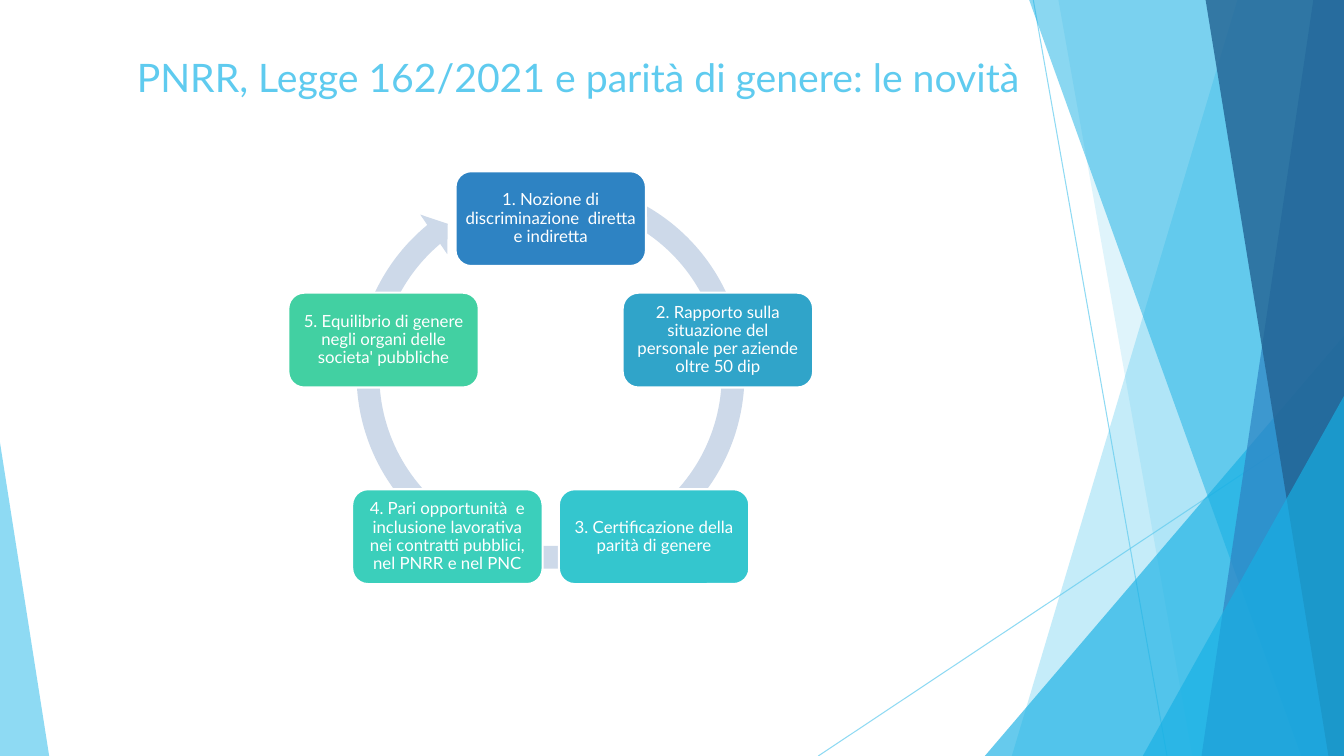
import math
import pptx
import pptx.dml.color
import pptx.enum.shapes
import pptx.enum.text
import pptx.oxml
import pptx.oxml.ns
import pptx.util
from pptx.util import Cm

THEME = {
    "font": "Lato",
    "title_size": 28,
    "step_size": 12,
    "white": "FFFFFF",
    "sky": "5FCBEF",
    "cyan": "17B0E4",
    "blue": "2E83C3",
    "navy": "226292",
    "ring": "CDD9E9",
    "steps": ["2E83C3", "30A4C9", "34C6CE", "3BCFBB", "42D0A2"],
}
WIDTH, HEIGHT = 33.87, 19.05
PRESET = pptx.enum.shapes.MSO_SHAPE


def paint(fill, color, opacity=100):
    fill.solid()
    fill.fore_color.rgb = pptx.dml.color.RGBColor.from_string(color)
    if opacity < 100:
        tint = fill._xPr.find(".//" + pptx.oxml.ns.qn("a:srgbClr"))
        alpha = pptx.oxml.parse_xml(f"<a:alpha {pptx.oxml.ns.nsdecls('a')} val='{opacity * 1000}'/>")
        tint.append(alpha)


def write(paragraph, words, size, color):
    run = paragraph.add_run()
    run.text = words
    run.font.name = THEME["font"]
    run.font.size = pptx.util.Pt(size)
    run.font.color.rgb = pptx.dml.color.RGBColor.from_string(color)


deck = pptx.Presentation()
deck.slide_width, deck.slide_height = Cm(WIDTH), Cm(HEIGHT)
slide = deck.slides.add_slide(deck.slide_layouts[6])
shapes = slide.shapes

for x1, y1, x2, y2 in [(26.04, 0, 29.41, HEIGHT), (WIDTH, 10.24, 20.62, HEIGHT)]:
    ray = shapes.add_connector(
        pptx.enum.shapes.MSO_CONNECTOR.STRAIGHT, Cm(x1), Cm(y1), Cm(x2), Cm(y2))
    ray.line.width = pptx.util.Pt(0.75)
    paint(ray.line.fill, THEME["sky"], 70)
    ray._element.spPr.append(
        pptx.oxml.parse_xml(f"<a:effectLst {pptx.oxml.ns.nsdecls('a')}/>"))

facets = [
    ("band", (31.19, 25.5), "sky", 36),
    ("band", (26.67, 30.05), "sky", 20),
    ("triangle", (24.82, 8.46, 9.05, 1), "cyan", 66),
    ("band", (25.93, 32.79), "cyan", 50),
    ("band", (33.1, 30.28), "blue", 70),
    ("band", (30.38, 33.48), "navy", 80),
    ("triangle", (28.8, 9.98, 5.07, 1), "cyan", 66),
    ("triangle", (0, 11.15, 1.24, 0), "sky", 70),
]
for kind, geometry, color, opacity in facets:
    if kind == "band":
        top_x, bottom_x = geometry
        outline = shapes.build_freeform(Cm(top_x), Cm(-0.02))
        outline.add_line_segments(
            [(Cm(WIDTH), Cm(-0.02)), (Cm(WIDTH), Cm(HEIGHT)), (Cm(bottom_x), Cm(HEIGHT))])
        facet = outline.convert_to_shape()
    else:
        left, top, width, apex = geometry
        facet = shapes.add_shape(
            PRESET.ISOSCELES_TRIANGLE, Cm(left), Cm(top), Cm(width), Cm(HEIGHT - top))
        facet.adjustments[0] = apex
    facet.shadow.inherit = False
    facet.line.fill.background()
    paint(facet.fill, THEME[color], opacity)

title = shapes.add_textbox(Cm(3.2), Cm(1.22), Cm(27.3), Cm(2.69)).text_frame
title.word_wrap = True
write(title.paragraphs[0], "PNRR, Legge 162/2021 e parità di genere: le novità",
      THEME["title_size"], THEME["sky"])

cycle = shapes.add_shape(PRESET.CIRCULAR_ARROW, Cm(8.67), Cm(4.24), Cm(10.41), Cm(10.41))
for index, value in enumerate([0.055, 3.307, 138.146, 173.625, 0.058]):
    cycle.adjustments[index] = value
cycle.shadow.inherit = False
cycle.line.fill.background()
paint(cycle.fill, THEME["ring"])

steps = [
    "1. Nozione di discriminazione  diretta e indiretta",
    "2. Rapporto sulla situazione del personale per aziende oltre 50 dip",
    "3. Certificazione della parità di genere",
    "4. Pari opportunità  e inclusione lavorativa nei contratti pubblici, nel PNRR e nel PNC",
    "5. Equilibrio di genere negli organi delle societa' pubbliche",
]
center_x, center_y, radius = 13.88, 9.94, 4.43
step_width, step_height = 4.8, 2.39
for index, (words, color) in enumerate(zip(steps, THEME["steps"])):
    angle = 2 * math.pi * index / len(steps)
    step = shapes.add_shape(
        PRESET.ROUNDED_RECTANGLE,
        Cm(center_x + radius * math.sin(angle) - step_width / 2),
        Cm(center_y - radius * math.cos(angle) - step_height / 2),
        Cm(step_width), Cm(step_height))
    step.shadow.inherit = False
    paint(step.fill, color)
    paint(step.line.fill, THEME["white"])
    step.line.width = pptx.util.Pt(1.5)
    frame = step.text_frame
    frame.word_wrap = True
    frame.vertical_anchor = pptx.enum.text.MSO_ANCHOR.MIDDLE
    frame.margin_left = frame.margin_right = Cm(0.13)
    frame.margin_top = frame.margin_bottom = Cm(0.13)
    label = frame.paragraphs[0]
    label.alignment = pptx.enum.text.PP_ALIGN.CENTER
    label.line_spacing = 0.9
    write(label, words, THEME["step_size"], THEME["white"])

deck.save("out.pptx")
